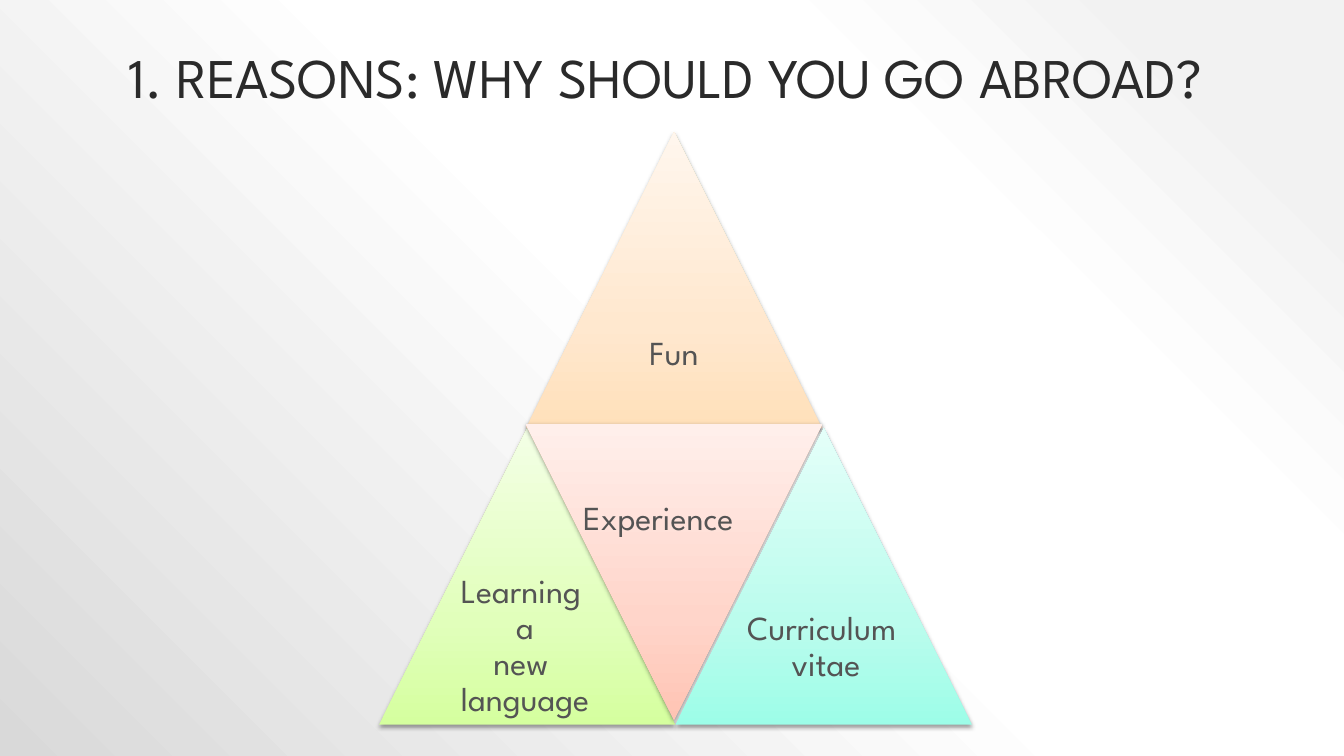
from lxml.etree import SubElement
from pptx import Presentation
from pptx.dml.color import RGBColor
from pptx.enum.shapes import MSO_SHAPE
from pptx.enum.text import MSO_ANCHOR, MSO_AUTO_SIZE, PP_ALIGN
from pptx.oxml import parse_xml
from pptx.oxml.ns import nsdecls, qn
from pptx.util import Inches, Pt

COLORS = {
    "title": "2A2A2A",
    "label": "545454",
    "shadow": "000000",
    "background": ["F2F2F2", "FFFFFF", "FFFFFF", "D9D9D9"],
    "orange": ["FFE0BA", "FFE8CF", "FFF6ED"],
    "green": ["D5FF9F", "E1FFBB", "F3FFE5"],
    "red": ["FFC4B4", "FFD5CA", "FFEFEB"],
    "teal": ["9DFDE8", "BBFCED", "E4FFF9"],
}


def write_text(shape, text, size=24, color="label", align=PP_ALIGN.CENTER,
               anchor=MSO_ANCHOR.TOP, wrap=True, grow=False, font="League Spartan"):
    frame = shape.text_frame
    frame.text = text
    frame.word_wrap = wrap
    frame.vertical_anchor = anchor
    frame.auto_size = MSO_AUTO_SIZE.SHAPE_TO_FIT_TEXT if grow else MSO_AUTO_SIZE.NONE
    for paragraph in frame.paragraphs:
        paragraph.alignment = align
        paragraph.line_spacing = 0.9
        for run in paragraph.runs:
            run.font.name = font
            run.font.size = Pt(size)
            run.font.color.rgb = RGBColor.from_string(COLORS[color])


def gradient(colors, positions, direction):
    stops = "".join(
        f'<a:gs pos="{position * 1000}"><a:srgbClr val="{color}"/></a:gs>'
        for position, color in zip(positions, colors))
    return parse_xml(f'<a:gradFill {nsdecls("a")} rotWithShape="0">'
                     f'<a:gsLst>{stops}</a:gsLst>{direction}</a:gradFill>')


class PyramidSlide:
    cell = 1.47
    left, top = 3.76, 1.31

    def __init__(self, presentation):
        self.width = presentation.slide_width
        self.height = presentation.slide_height
        self.slide = presentation.slides.add_slide(presentation.slide_layouts[5])

    def place(self, column, row, columns, rows):
        return (Inches(self.left + column * self.cell), Inches(self.top + row * self.cell),
                Inches(columns * self.cell), Inches(rows * self.cell))

    def background(self):
        fill = self.slide.background.fill
        fill.solid()
        properties = self.slide.element.find(".//" + qn("p:bgPr"))
        direction = ('<a:path path="circle">'
                     '<a:fillToRect l="100000" b="100000"/></a:path>')
        properties.replace(properties[0],
                           gradient(COLORS["background"], [10, 28, 48, 100], direction))

    def title(self, text):
        title = self.slide.shapes.title
        title.left, title.top = 0, int(self.height * 0.028)
        title.width, title.height = self.width, int(self.height * 0.125)
        write_text(title, text, size=40, color="title", anchor=MSO_ANCHOR.BOTTOM)

    def triangle(self, column, row, color, rotation=0):
        shape = self.slide.shapes.add_shape(
            MSO_SHAPE.ISOSCELES_TRIANGLE, *self.place(column, row, 2, 2))
        shape.rotation = rotation
        shape.line.fill.background()
        shape.fill.solid()
        properties = shape.element.spPr
        properties.replace(
            properties.find(qn("a:solidFill")),
            gradient(COLORS[color], [0, 35, 100], '<a:lin ang="16200000" scaled="0"/>'))
        shape.shadow.inherit = False
        shadow = SubElement(properties.find(qn("a:effectLst")), qn("a:outerShdw"),
                            blurRad=str(Pt(3.1)), dist=str(Pt(1.6)),
                            dir="5400000", rotWithShape="0")
        tint = SubElement(shadow, qn("a:srgbClr"), val=COLORS["shadow"])
        SubElement(tint, qn("a:alpha"), val="38000")

    def label(self, text, column, row, columns, rows, **style):
        box = self.slide.shapes.add_textbox(*self.place(column, row, columns, rows))
        write_text(box, text, **style)


def main():
    presentation = Presentation()
    presentation.slide_width = Inches(13.33)
    presentation.slide_height = Inches(7.5)
    pyramid = PyramidSlide(presentation)
    pyramid.background()
    pyramid.title("1. REASONS: WHY SHOULD YOU GO ABROAD? ")
    pyramid.triangle(0.99, 0, "orange")
    pyramid.label("Fun", 1.49, 1, 1, 1, anchor=MSO_ANCHOR.MIDDLE)
    pyramid.triangle(0, 2, "green")
    pyramid.triangle(0.99, 1.97, "red", rotation=180)
    pyramid.triangle(2, 2, "teal")
    pyramid.label("Experience", 1.31, 2.46, 1.52, 0.32, align=PP_ALIGN.LEFT, grow=True)
    pyramid.label("Learning \na\nnew \nlanguage", 0.37, 2.95, 1.23, 1.06,
                  wrap=False, grow=True)
    pyramid.label("Curriculum \nvitae", 2.35, 3.2, 1.33, 0.82, wrap=False, grow=True)
    presentation.save("out.pptx")


if __name__ == "__main__":
    main()
